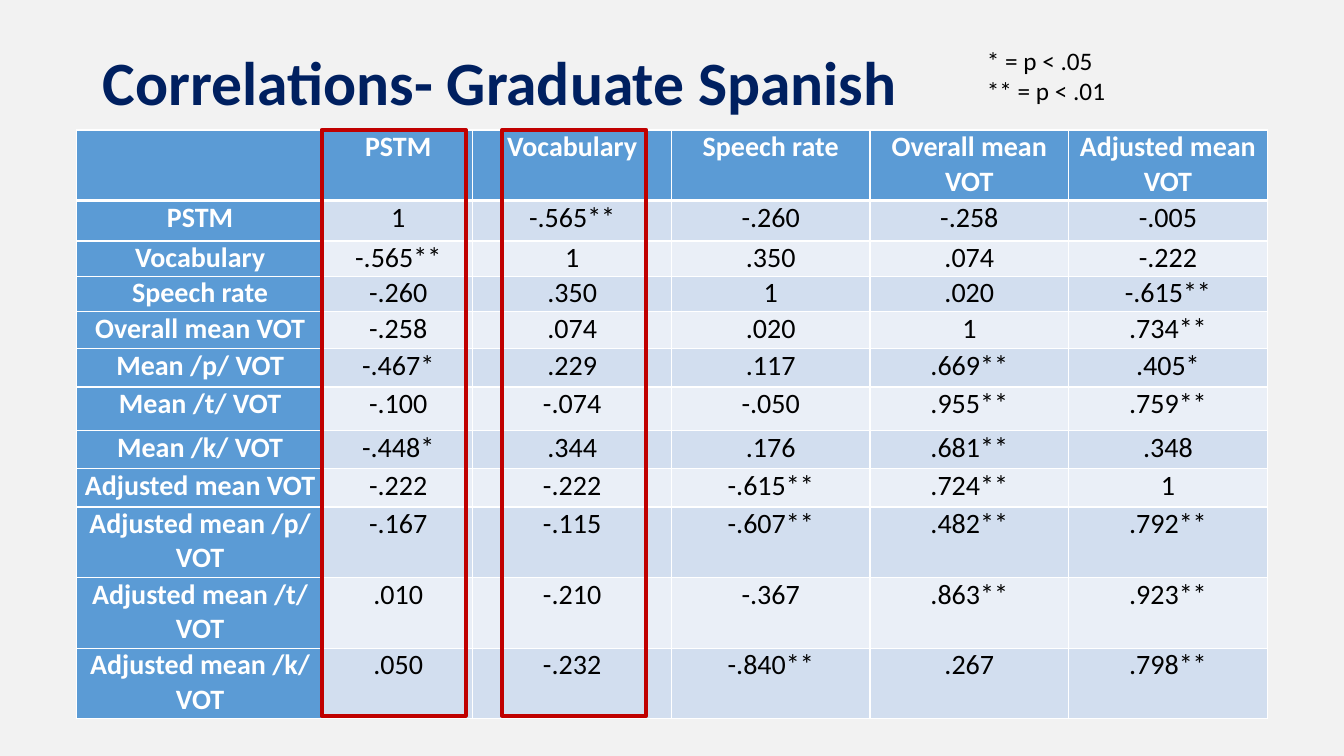
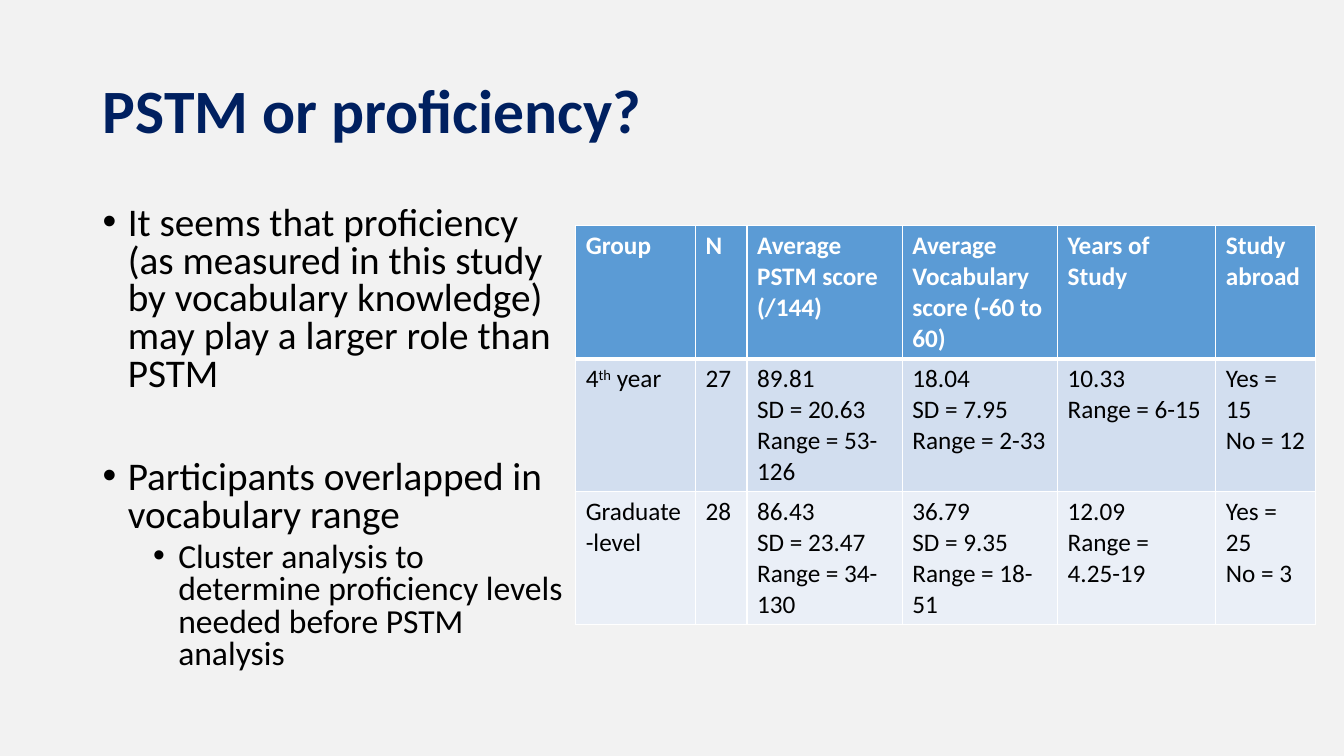
from lxml.etree import SubElement
from pptx import Presentation
from pptx.dml.color import RGBColor
from pptx.enum.shapes import MSO_SHAPE
from pptx.enum.text import MSO_ANCHOR, PP_ALIGN
from pptx.oxml.ns import qn
from pptx.util import Inches, Pt

FONT = "Calibri"
PAPER = RGBColor(0xF2, 0xF2, 0xF2)
NAVY = RGBColor(0x00, 0x20, 0x60)
BLUE = RGBColor(0x5B, 0x9B, 0xD5)
BAND_DARK = RGBColor(0xD2, 0xDE, 0xEF)
BAND_LIGHT = RGBColor(0xEA, 0xEF, 0xF7)
RED = RGBColor(0xC0, 0x00, 0x00)
BLACK = RGBColor(0x00, 0x00, 0x00)
WHITE = RGBColor(0xFF, 0xFF, 0xFF)

CORRELATIONS = [
    ["", "PSTM", "Vocabulary", "Speech rate", "Overall mean VOT", "Adjusted mean VOT"],
    ["PSTM", "1", "-.565**", "-.260", "-.258", "-.005"],
    ["Vocabulary", "-.565**", "1", ".350", ".074", "-.222"],
    ["Speech rate", "-.260", ".350", "1", ".020", "-.615**"],
    ["Overall mean VOT", "-.258", ".074", ".020", "1", ".734**"],
    ["Mean /p/ VOT", "-.467*", ".229", ".117", ".669**", ".405*"],
    ["Mean /t/ VOT", "-.100", "-.074", "-.050", ".955**", ".759**"],
    ["Mean /k/ VOT", "-.448*", ".344", ".176", ".681**", ".348"],
    ["Adjusted mean VOT", "-.222", "-.222", "-.615**", ".724**", "1"],
    ["Adjusted mean /p/ VOT", "-.167", "-.115", "-.607**", ".482**", ".792**"],
    ["Adjusted mean /t/ VOT", ".010", "-.210", "-.367", ".863**", ".923**"],
    ["Adjusted mean /k/ VOT", ".050", "-.232", "-.840**", ".267", ".798**"],
]
CORRELATION_COLUMNS = [2.45, 1.48] + [1.97] * 4
CORRELATION_ROWS = [0.7, 0.4, 0.35, 0.35, 0.37, 0.38, 0.43, 0.38, 0.38] + [0.7] * 3

GROUPS = [
    ["Group", "N", "Average PSTM score (/144)", "Average Vocabulary score (-60 to 60)",
     "Years of Study", "Study abroad"],
    ["4^th^ year", "27", "89.81\nSD = 20.63\nRange = 53-126",
     "18.04\nSD = 7.95\nRange = 2-33", "10.33\nRange = 6-15", "Yes = 15\nNo = 12"],
    ["Graduate-level", "28", "86.43\nSD = 23.47\nRange = 34-130",
     "36.79\nSD = 9.35\nRange = 18-51", "12.09\nRange = 4.25-19", "Yes = 25\nNo = 3"],
]
GROUP_COLUMNS = [1.19, 0.51, 1.54, 1.54, 1.57, 0.99]
GROUP_ROWS = [1.32] * 3

# text, level, space before
FINDINGS = [
    ("It seems that proficiency (as measured in this study by vocabulary knowledge) "
     "may play a larger role than PSTM", 0, 10),
    ("Participants overlapped in vocabulary range", 0, 47),
    ("Cluster analysis to determine proficiency levels needed before PSTM analysis", 1, 5),
]


def set_all(target, values):
    for name, value in values.items():
        setattr(target, name, value)


def write_para(para, text, size, color=BLACK, bold=False, **layout):
    """Fill one paragraph; text between carets is superscript."""
    set_all(para, layout)
    for number, part in enumerate(text.split("^")):
        span = para.add_run()
        span.text = part
        set_all(span.font, {"name": FONT, "size": Pt(size), "bold": bold})
        span.font.color.rgb = color
        if number % 2:
            span._r.get_or_add_rPr().set("baseline", "30000")


def write_lines(frame, lines, size, **style):
    for number, line in enumerate(lines):
        para = frame.add_paragraph() if number else frame.paragraphs[0]
        write_para(para, line, size, **style)


def add_text_frame(slide, box, anchor=MSO_ANCHOR.TOP):
    frame = slide.shapes.add_textbox(*map(Inches, box)).text_frame
    set_all(frame, {"word_wrap": True, "vertical_anchor": anchor})
    return frame


def add_titled_slide(deck, title, title_height):
    slide = deck.slides.add_slide(deck.slide_layouts[6])
    slide.background.fill.solid()
    slide.background.fill.fore_color.rgb = PAPER
    frame = add_text_frame(slide, (0.92, 0.4, 11.5, title_height), MSO_ANCHOR.MIDDLE)
    write_lines(frame, [title], 44, color=NAVY, bold=True, line_spacing=0.9)
    return slide


def add_cell_borders(cell, widths):
    properties = cell._tc.get_or_add_tcPr()
    for side, width in widths.items():
        line = SubElement(properties, qn(f"a:ln{side}"), w=str(Pt(width)))
        fill = SubElement(line, qn("a:solidFill"))
        SubElement(fill, qn("a:srgbClr"), val=str(WHITE))


def add_banded_table(slide, left, top, rows, widths, heights, size,
                     head_column=False, margins=None, align=PP_ALIGN.LEFT):
    """Table with a blue head row, optional blue head column and banded body."""
    box = map(Inches, (left, top, sum(widths), sum(heights)))
    table = slide.shapes.add_table(len(rows), len(widths), *box).table
    for column, width in zip(table.columns, widths):
        column.width = Inches(width)
    for row, height in zip(table.rows, heights):
        row.height = Inches(height)
    for r, texts in enumerate(rows):
        for c, text in enumerate(texts):
            cell = table.cell(r, c)
            head = r == 0 or (head_column and c == 0)
            add_cell_borders(cell, {"L": 1, "R": 1, "T": 3 if r == 1 else 1,
                                    "B": 3 if r == 0 else 1})
            cell.fill.solid()
            cell.fill.fore_color.rgb = BLUE if head else BAND_DARK if r % 2 else BAND_LIGHT
            set_all(cell, margins or {})
            write_lines(cell.text_frame, text.split("\n"), size, bold=head,
                        color=WHITE if head else BLACK, alignment=align)


def add_highlight(slide, box):
    frame = slide.shapes.add_shape(MSO_SHAPE.RECTANGLE, *map(Inches, box))
    frame.shadow.inherit = False
    frame.fill.background()
    frame.line.color.rgb = RED
    frame.line.width = Pt(3)


def add_bullets(slide, box, items):
    frame = add_text_frame(slide, box)
    for number, (text, level, before) in enumerate(items):
        para = frame.add_paragraph() if number else frame.paragraphs[0]
        write_para(para, text, 28 - 4 * level, level=level,
                   line_spacing=0.8, space_before=Pt(before))
        properties = para._p.get_or_add_pPr()
        properties.set("marL", str(Inches(0.25 + 0.5 * level)))
        properties.set("indent", str(Inches(-0.25)))
        SubElement(properties, qn("a:buFont"), typeface="Arial")
        SubElement(properties, qn("a:buChar"), char="•")


def build_correlations(deck):
    slide = add_titled_slide(deck, "Correlations- Graduate Spanish", 0.89)
    left, top = 0.76, 1.29
    margins = {"margin_left": Inches(0.07), "margin_right": Inches(0.07),
               "margin_top": 0, "margin_bottom": 0}
    add_banded_table(slide, left, top, CORRELATIONS, CORRELATION_COLUMNS,
                     CORRELATION_ROWS, 20, True, margins, PP_ALIGN.CENTER)
    for offset in (2.43, 4.22):
        add_highlight(slide, (left + offset, top, 1.43, 5.81))
    legend = add_text_frame(slide, (9.69, 0.4, 2.88, 0.71))
    write_lines(legend, ["* = p < .05", "** = p < .01"], 18)


def build_proficiency(deck):
    slide = add_titled_slide(deck, "PSTM or proficiency?", 1.45)
    add_bullets(slide, (0.92, 2, 4.8, 4.76), FINDINGS)
    add_banded_table(slide, 5.71, 2.24, GROUPS, GROUP_COLUMNS, GROUP_ROWS, 18)


def main():
    deck = Presentation()
    set_all(deck, {"slide_width": Inches(13.33), "slide_height": Inches(7.5)})
    build_correlations(deck)
    build_proficiency(deck)
    deck.save("out.pptx")


if __name__ == "__main__":
    main()
